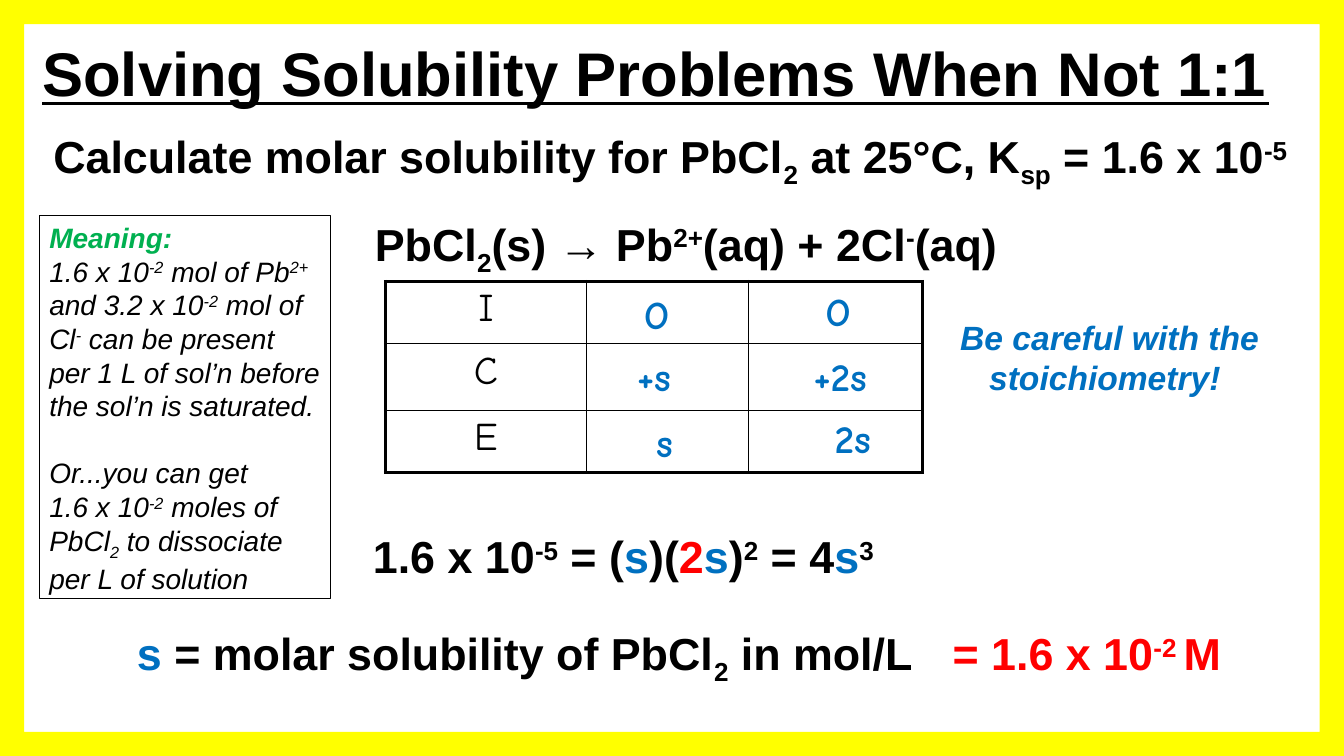
from dataclasses import dataclass

from lxml import etree
from pptx import Presentation, util as u
from pptx.dml.color import RGBColor
from pptx.enum import shapes, text
from pptx.oxml.ns import qn

PX = u.Inches(1) // 100


@dataclass(frozen=True)
class Theme:
    font: str = "Arial"
    hand: str = "Comic Neue"
    black: str = "000000"
    blue: str = "0070C0"
    red: str = "FF0000"
    green: str = "00B050"
    yellow: str = "FFFF00"
    title: int = 44
    body: int = 32
    ice: int = 28
    callout: int = 24
    note: int = 20


@dataclass
class Run:
    text: str
    color: str = None
    base: int = 0
    bold: bool = None


def sup(s, color=None):
    return Run(s, color, 30000)


def sub(s):
    return Run(s, base=-25000)


class Deck:
    def __init__(self, theme):
        self.theme = theme
        self.prs = Presentation()
        self.prs.slide_width, self.prs.slide_height = 1333 * PX, 750 * PX
        self.slide = self.prs.slides.add_slide(self.prs.slide_layouts[5])

    def style(self, p, size, color=None, name=None, bold=True, italic=False):
        f = p.font
        f.name, f.size = name or self.theme.font, u.Pt(size)
        f.bold, f.italic = bold, italic
        f.color.rgb = RGBColor.from_string(color or self.theme.black)

    def add_runs(self, p, runs):
        """Add runs to a paragraph; a newline in a plain string breaks the line."""
        for run in runs:
            if run == "\n":
                p.add_line_break()
                continue
            run = Run(run) if isinstance(run, str) else run
            r = p.add_run()
            r.text = run.text
            if run.color:
                r.font.color.rgb = RGBColor.from_string(run.color)
            if run.bold is not None:
                r.font.bold = run.bold
            if run.base:
                r._r.get_or_add_rPr().set("baseline", str(run.base))

    def title(self, x, y, w, h, words):
        sp = self.slide.shapes.title
        sp.left, sp.top, sp.width, sp.height = (v * PX for v in (x, y, w, h))
        tf = sp.text_frame
        tf.auto_size = text.MSO_AUTO_SIZE.NONE
        tf.vertical_anchor = text.MSO_ANCHOR.MIDDLE
        p = tf.paragraphs[0]
        p.alignment = text.PP_ALIGN.LEFT
        self.style(p, self.theme.title)
        p.font.underline = True
        self.add_runs(p, [words])

    def text(self, x, y, w, h, *paras, size=None, wrap=True, align="LEFT", gap=0, **look):
        sp = self.slide.shapes.add_textbox(x * PX, y * PX, w * PX, h * PX)
        tf = sp.text_frame
        tf.word_wrap = wrap
        tf.auto_size = text.MSO_AUTO_SIZE.SHAPE_TO_FIT_TEXT
        for i, runs in enumerate(paras):
            p = tf.add_paragraph() if i else tf.paragraphs[0]
            p.alignment = text.PP_ALIGN[align]
            p.space_before = u.Pt(gap if i else 0)
            self.style(p, size or self.theme.body, **look)
            self.add_runs(p, runs)
        return sp

    def outline(self, sp, width):
        sp.line.color.rgb = RGBColor.from_string(self.theme.black)
        sp.line.width = u.Pt(width)

    def frame(self, thickness):
        sp = self.slide.shapes.add_shape(
            shapes.MSO_SHAPE.FRAME, 0, 0, self.prs.slide_width, self.prs.slide_height)
        sp.adjustments[0] = thickness
        sp.shadow.inherit = False
        sp.fill.solid()
        sp.fill.fore_color.rgb = RGBColor.from_string(self.theme.yellow)
        sp.line.fill.background()

    def border(self, cell, side, width):
        pr = cell._tc.get_or_add_tcPr()
        ln = etree.SubElement(pr, qn(f"a:ln{side}"), w=str(u.Pt(width)))
        fill = etree.SubElement(ln, qn("a:solidFill"))
        etree.SubElement(fill, qn("a:srgbClr"), val=self.theme.black)

    def table(self, x, y, cols, rows, labels):
        """Grid with heavy outer borders and labels down the first column."""
        table = self.slide.shapes.add_table(
            len(rows), len(cols), x * PX, y * PX, sum(cols) * PX, sum(rows) * PX).table
        table.first_row = table.horz_banding = False
        for col, w in zip(table.columns, cols):
            col.width = w * PX
        for i, (row, h) in enumerate(zip(table.rows, rows)):
            row.height = h * PX
            for j, cell in enumerate(row.cells):
                outer = {"L": j == 0, "R": j == len(cols) - 1,
                         "T": i == 0, "B": i == len(rows) - 1}
                for side, heavy in outer.items():
                    self.border(cell, side, 2.25 if heavy else 1)
                cell.fill.background()
            p = row.cells[0].text_frame.paragraphs[0]
            p.alignment = text.PP_ALIGN.CENTER
            p.space_before = u.Pt(5.6)
            self.style(p, self.theme.ice, name=self.theme.hand, bold=False)
            self.add_runs(p, [labels[i]])


def main():
    t = Theme()
    d = Deck(t)
    s = Run("s", t.blue)

    d.title(32, 31, 1269, 81, "Solving Solubility Problems When Not 1:1")
    d.text(43, 123, 1252, 64, ["Calculate molar solubility for PbCl", sub("2"),
                               " at 25°C, K", sub("sp"), " = 1.6 x 10", sup("-5")])
    d.text(362, 210, 826, 64, ["PbCl", sub("2"), "(s) → Pb", sup("2+"),
                               "(aq) + 2Cl", sup("-"), "(aq)"])

    d.table(382, 279, [200, 160, 173], [62, 66, 62], "ICE")
    entries = [(629, 283, 51, "O"), (809, 280, 51, "O"),
               (622, 345, 63, "+s"), (797, 345, 91, "+2s"),
               (641, 410, 39, "s"), (818, 406, 63, "2s")]
    for x, y, w, entry in entries:
        d.text(x, y, w, 57, [entry], size=t.ice, wrap=False, color=t.blue, name=t.hand)

    d.text(360, 520, 660, 64, ["1.6 x 10", sup("-5"), " = (", s, ")(", Run("2", t.red), s,
                               ")", sup("2"), " = 4", s, sup("3")])
    d.text(126, 616, 1207, 64, [s, " = molar solubility of PbCl", sub("2"), " in mol/L"])
    d.text(935, 616, 293, 64, ["= 1.6 x 10", sup("-2 "), "M"], wrap=False, color=t.red)
    d.frame(0.032)
    d.text(935, 309, 331, 91, ["Be careful with the stoichiometry! "], size=t.callout,
           align="CENTER", color=t.blue, italic=True)

    meaning = d.text(
        39, 214, 289, 380,
        [Run("Meaning: ", t.green, bold=True), "\n", "1.6 x 10", sup("-2"), " mol of Pb",
         sup("2+"), " and 3.2 x 10", sup("-2"), " mol of Cl", sup("-"),
         " can be present per 1 L of sol’n before the sol’n is saturated."],
        ["Or...you can get ", "\n", "1.6 x 10", sup("-2"), " moles of PbCl", sub("2"),
         " to dissociate per L of solution"],
        size=t.note, gap=24, bold=False, italic=True)
    d.outline(meaning, 0.75)

    d.prs.save("out.pptx")


if __name__ == "__main__":
    main()
